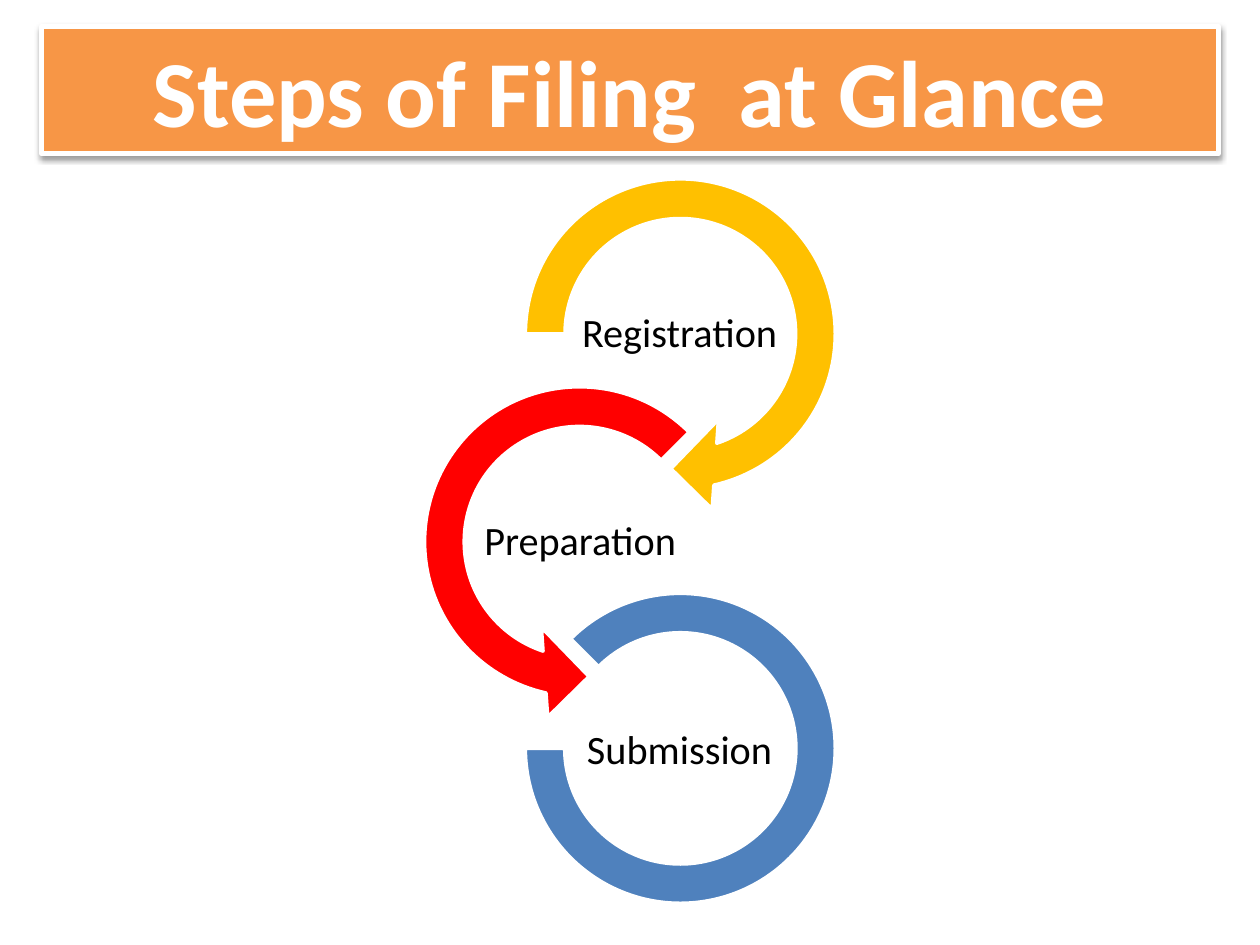
from lxml import etree
from pptx import Presentation
from pptx.dml.color import RGBColor
from pptx.enum.shapes import MSO_SHAPE
from pptx.enum.text import MSO_ANCHOR, MSO_AUTO_SIZE, PP_ALIGN
from pptx.oxml import parse_xml
from pptx.oxml.ns import nsdecls, qn
from pptx.util import Inches, Pt

WHITE = RGBColor(0xFF, 0xFF, 0xFF)
BLACK = RGBColor(0, 0, 0)
ORANGE = RGBColor(0xF7, 0x96, 0x46)
GOLD = RGBColor(0xFF, 0xC0, 0x00)
RED = RGBColor(0xFF, 0x00, 0x00)
BLUE = RGBColor(0x4F, 0x81, 0xBD)


def add_filled(kind, left, top, width, height, color, line_width):
    sp = slide.shapes.add_shape(
        kind, Inches(left), Inches(top), Inches(width), Inches(height))
    sp.fill.solid()
    sp.fill.fore_color.rgb = color
    sp.line.color.rgb = WHITE
    sp.line.width = Pt(line_width)
    sp.shadow.inherit = False
    return sp


def write_text(tf, text, size, color, bold=False):
    tf.word_wrap = True
    tf.vertical_anchor = MSO_ANCHOR.MIDDLE
    p = tf.paragraphs[0]
    p.text = text
    p.alignment = PP_ALIGN.CENTER
    p.font.name = "Calibri"
    p.font.size = Pt(size)
    p.font.bold = bold
    p.font.color.rgb = color
    return p


prs = Presentation()
prs.slide_width, prs.slide_height = Inches(10), Inches(7.5)
slide = prs.slides.add_slide(prs.slide_layouts[6])

# Step, ring shape, adjustments, color, ring left, top and size, label left and top
steps = [
    ("Registration", MSO_SHAPE.CIRCULAR_ARROW, (0.11, 11.42, 45, 108, 0.125),
     GOLD, 3.97, 1.22, 2.86, 4.6, 2.26),
    ("Preparation", MSO_SHAPE.LEFT_CIRCULAR_ARROW, (0.11, 11.42, 63, 189, 0.125),
     RED, 3.17, 2.87, 2.86, 3.81, 3.91),
    ("Submission", MSO_SHAPE.BLOCK_ARC, (135, 108, 0.127),
     BLUE, 4.17, 4.71, 2.46, 4.6, 5.57),
]
for step, kind, adjustments, color, left, top, size, label_left, label_top in steps:
    ring = add_filled(kind, left, top, size, size, color, 2)
    for i, value in enumerate(adjustments):
        ring.adjustments[i] = value
    label = slide.shapes.add_textbox(
        Inches(label_left), Inches(label_top), Inches(1.59), Inches(0.79))
    tf = label.text_frame
    tf.margin_left = tf.margin_right = Inches(0)
    tf.margin_top = tf.margin_bottom = Inches(0.02)
    write_text(tf, step, 23, BLACK).line_spacing = 0.9

title = add_filled(MSO_SHAPE.RECTANGLE, 0.33, 0.21, 9.34, 1.01, ORANGE, 3)
write_text(title.text_frame, "Steps of Filing  at Glance", 54, WHITE, bold=True)
title.text_frame.auto_size = MSO_AUTO_SIZE.SHAPE_TO_FIT_TEXT
effects = title.element.spPr.find(qn("a:effectLst"))
shadow = etree.SubElement(effects, qn("a:outerShdw"), blurRad=str(Pt(3.1)),
                          dist=str(Pt(1.6)), dir="5400000", rotWithShape="0")
shadow.append(parse_xml(
    f'<a:srgbClr {nsdecls("a")} val="000000"><a:alpha val="38000"/></a:srgbClr>'))

prs.save("out.pptx")
